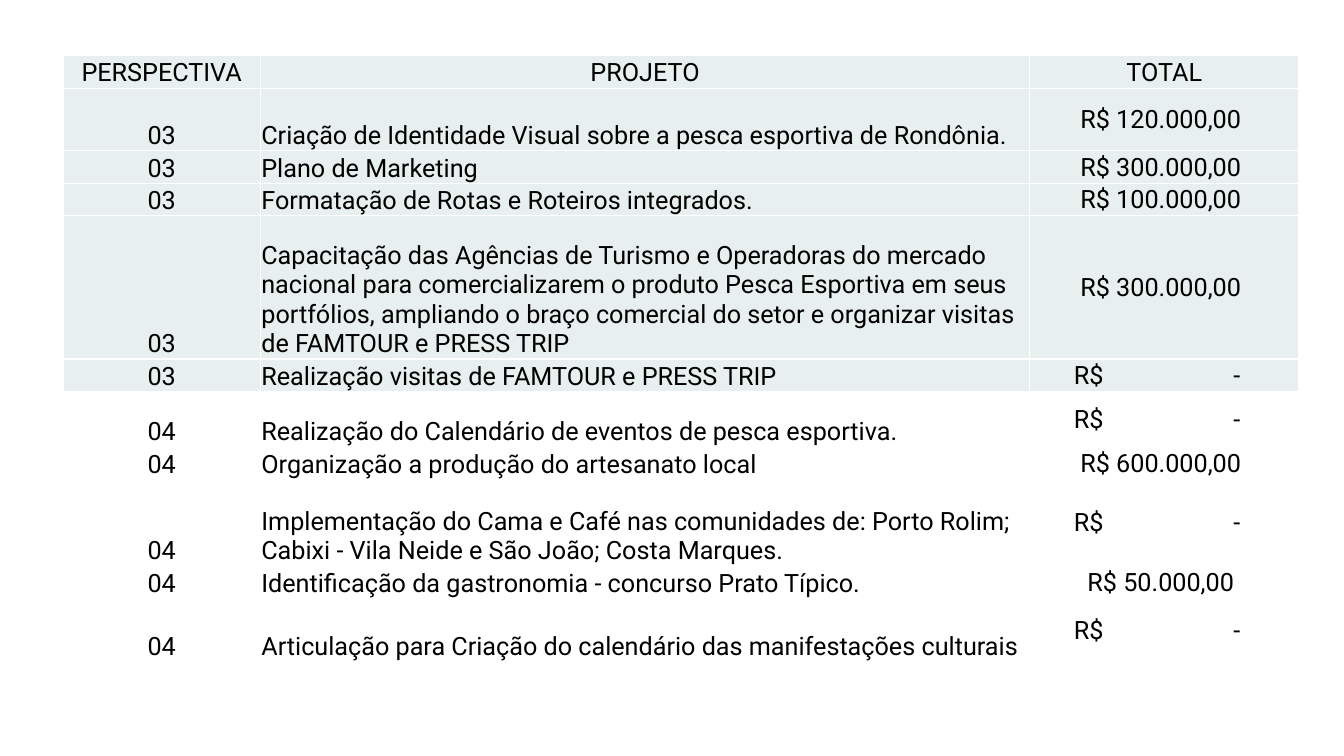
from pptx import Presentation
from pptx.dml.color import RGBColor
from pptx.enum.text import MSO_ANCHOR as Anchor, PP_ALIGN as Align
from pptx.oxml.ns import qn
from pptx.util import Pt
from lxml.etree import SubElement

COLORS = {"text": "000000", "mint": "E8EFEF", "white": "FFFFFF"}
FILL_BY_PERSPECTIVE = {"03": "mint", "04": "white"}
FONT = {"name": "Roboto", "size": Pt(18), "bold": False}

# Cell formats; all lengths in points
BASE = {"margin_left": Pt(0.7), "margin_right": Pt(0.7),
        "margin_top": Pt(0.7), "margin_bottom": Pt(0),
        "vertical_anchor": Anchor.BOTTOM}
AMOUNT = {**BASE, "margin_right": Pt(5.7), "vertical_anchor": Anchor.MIDDLE}
NO_AMOUNT = {**AMOUNT, "margin_left": Pt(31.5)}
DASH_STOP = Pt(119)

COLUMN_WIDTHS = [141, 549.5, 192.2]
HEADINGS = ["PERSPECTIVA", "PROJETO", "TOTAL"]
LINE = 23.2
EMPTY = "R$\t-"

# Perspective, project, total, row height
PROJECTS = [
    ("03", "Criação de Identidade Visual sobre a pesca esportiva de Rondônia.",
     "R$ 120.000,00", 44.8),
    ("03", "Plano de Marketing", "R$ 300.000,00", LINE),
    ("03", "Formatação de Rotas e Roteiros integrados.", "R$ 100.000,00", LINE),
    ("03", "Capacitação das Agências de Turismo e Operadoras do mercado "
     "nacional para comercializarem o produto Pesca Esportiva em seus "
     "portfólios, ampliando o braço comercial do setor e organizar visitas "
     "de FAMTOUR e PRESS TRIP", "R$ 300.000,00", 102.3),
    ("03", "Realização visitas de FAMTOUR e PRESS TRIP", EMPTY, LINE),
    ("04", "Realização do Calendário de eventos de pesca esportiva.",
     EMPTY, 39.6),
    ("04", "Organização a produção do artesanato local", "R$ 600.000,00", LINE),
    ("04", "Implementação do Cama e Café nas comunidades de: Porto Rolim; "
     "Cabixi - Vila Neide e São João; Costa Marques.", EMPTY, 62),
    ("04", "Identificação da gastronomia - concurso Prato Típico.",
     "R$ 50.000,00", LINE),
    ("04", "Articulação para Criação do calendário das manifestações culturais",
     EMPTY, 44.8),
]


def apply_format(target, values):
    for attribute, value in values.items():
        setattr(target, attribute, value)


def add_borders(cell):
    properties = cell._tc.get_or_add_tcPr()
    for side in ("lnL", "lnR", "lnT", "lnB"):
        border = SubElement(properties, qn(f"a:{side}"), w=str(Pt(1)))
        fill = SubElement(border, qn("a:solidFill"))
        SubElement(fill, qn("a:srgbClr"), val=COLORS["white"])


def add_dash_stop(paragraph):
    stops = SubElement(paragraph._p.get_or_add_pPr(), qn("a:tabLst"))
    SubElement(stops, qn("a:tab"), pos=str(DASH_STOP), algn="r")


def fill_cell(cell, text, fill, align=Align.CENTER, layout=BASE):
    apply_format(cell, layout)
    add_borders(cell)
    cell.fill.solid()
    cell.fill.fore_color.rgb = RGBColor.from_string(COLORS[fill])
    paragraph = cell.text_frame.paragraphs[0]
    paragraph.alignment = align
    run = paragraph.add_run()
    run.text = text
    apply_format(run.font, FONT)
    run.font.color.rgb = RGBColor.from_string(COLORS["text"])


def fill_total(cell, total, fill):
    if total == EMPTY:
        fill_cell(cell, total, fill, Align.LEFT, NO_AMOUNT)
        add_dash_stop(cell.text_frame.paragraphs[0])
    else:
        fill_cell(cell, total, fill, layout=AMOUNT)


def add_budget(slide):
    heights = [LINE] + [project[-1] for project in PROJECTS]
    budget = slide.shapes.add_table(
        len(heights), len(HEADINGS), Pt(45), Pt(39.8),
        Pt(sum(COLUMN_WIDTHS)), Pt(sum(heights))).table
    apply_format(budget, {"first_row": False, "horz_banding": False})
    for column, width in zip(budget.columns, COLUMN_WIDTHS):
        column.width = Pt(width)
    for row, height in zip(budget.rows, heights):
        row.height = Pt(height)

    # Heading row
    for column, heading in enumerate(HEADINGS):
        fill_cell(budget.cell(0, column), heading, "mint")

    # Project rows
    for row, (perspective, project, total, _) in enumerate(PROJECTS, 1):
        fill = FILL_BY_PERSPECTIVE[perspective]
        fill_cell(budget.cell(row, 0), perspective, fill)
        fill_cell(budget.cell(row, 1), project, fill, Align.LEFT)
        fill_total(budget.cell(row, 2), total, fill)


def main():
    deck = Presentation()
    apply_format(deck, {"slide_width": Pt(960), "slide_height": Pt(540)})
    add_budget(deck.slides.add_slide(deck.slide_layouts[6]))
    deck.save("out.pptx")


if __name__ == "__main__":
    main()
